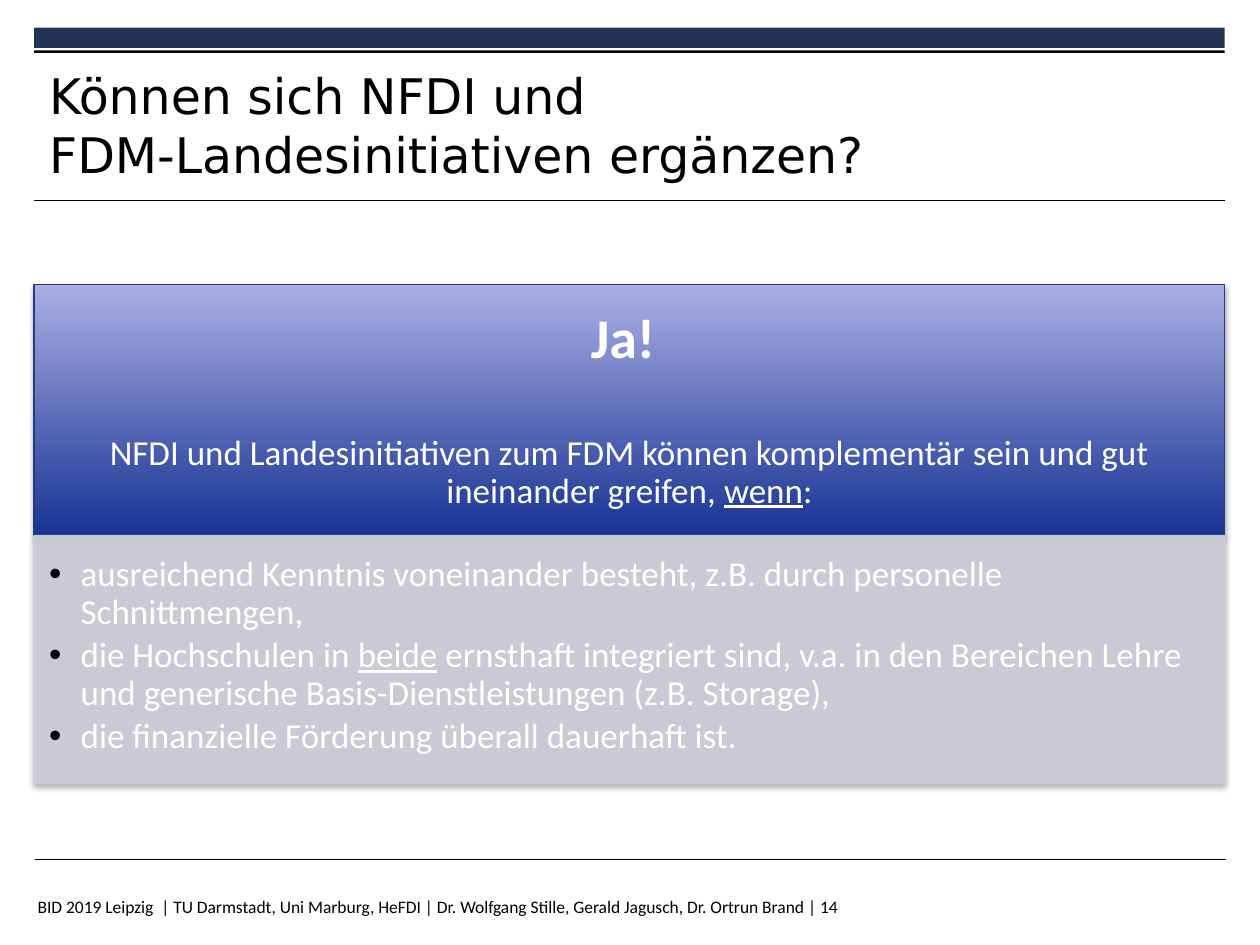
from dataclasses import dataclass

from lxml import etree
from pptx import Presentation
from pptx.dml.color import RGBColor
from pptx.enum.shapes import MSO_CONNECTOR, MSO_SHAPE
from pptx.enum.text import MSO_ANCHOR, MSO_AUTO_SIZE, PP_ALIGN
from pptx.oxml.ns import qn
from pptx.util import Inches, Pt

RECT = MSO_SHAPE.RECTANGLE
LINE = MSO_CONNECTOR.STRAIGHT
MIDDLE, TOP = MSO_ANCHOR.MIDDLE, MSO_ANCHOR.TOP
LEFT, CENTER = PP_ALIGN.LEFT, PP_ALIGN.CENTER
FIXED = MSO_AUTO_SIZE.NONE

EDGE, WIDE = 0.27, 9.45
BLACK, WHITE, GREY = "000000", "FFFFFF", "CDCED9"
BODY = {"name": "Calibri", "size": Pt(20), "color": WHITE}
UNDER = {"underline": True}


@dataclass
class Run:
    text: str
    extra: dict


@dataclass
class Para:
    runs: list[Run]
    after: float = 0
    bullet: bool = False


@dataclass
class Panel:
    top: float
    high: float
    edge: str
    inset: tuple
    align: int
    paras: list[Para]
    stops: tuple = ()
    alpha: int = 100


PANELS = [
    Panel(2.26, 1.99, "263B86", (0.25, 0.14, 0.25, 0.14), CENTER, [
        Para([Run("Ja! ", {"size": Pt(32), "bold": True})], after=37),
        Para([
            Run("NFDI und Landesinitiativen zum FDM können komplementär sein "
                "und gut ineinander greifen, ", {}),
            Run("wenn", UNDER),
            Run(":", {}),
        ]),
    ], stops=("183394", "A9AFE3")),
    Panel(4.25, 1.97, GREY, (0.12, 0.12, 0.16, 0.17), LEFT, [
        Para([Run("ausreichend Kenntnis voneinander besteht, z.B. durch "
                  "personelle Schnittmengen,", {})], 3, True),
        Para([
            Run("die Hochschulen in ", {}),
            Run("beide", UNDER),
            Run(" ernsthaft integriert sind, v.a. in den Bereichen Lehre und "
                "generische Basis-Dienstleistungen (z.B. Storage),", {}),
        ], 3, True),
        Para([Run("die finanzielle Förderung überall dauerhaft ist.", {})], 3, True),
    ], alpha=90),
]


def rgb(code: str) -> RGBColor:
    return RGBColor.from_string(code)


def add_tag(parent, tag: str, **attrs):
    return etree.SubElement(parent, qn(tag), {k: str(v) for k, v in attrs.items()})


def set_font(font, style: dict) -> None:
    for key, value in style.items():
        if key == "color":
            font.color.rgb = rgb(value)
        else:
            setattr(font, key, value)


def set_frame(frame, inset: tuple, anchor) -> None:
    left, top, right, bottom = map(Inches, inset)
    style = {"margin_left": left, "margin_top": top, "margin_right": right,
             "margin_bottom": bottom, "vertical_anchor": anchor,
             "word_wrap": True, "auto_size": FIXED}
    for key, value in style.items():
        setattr(frame, key, value)


def add_rule(slide, left: float, top: float) -> None:
    rule = slide.shapes.add_connector(
        LINE, Inches(left), Inches(top), Inches(left + WIDE), Inches(top))
    rule.line.color.rgb = rgb(BLACK)
    rule.line.width = Pt(0.6)
    add_tag(rule._element.spPr, "a:effectLst")


def add_rect(slide, top: float, high: float):
    rect = slide.shapes.add_shape(
        RECT, Inches(EDGE), Inches(top), Inches(WIDE), Inches(high))
    rect.shadow.inherit = False
    return rect


def add_bar(slide, top: float, high: float, color: str) -> None:
    bar = add_rect(slide, top, high)
    bar.fill.solid()
    bar.fill.fore_color.rgb = rgb(color)
    bar.line.fill.background()


def add_shadow(shape) -> None:
    effects = shape._element.spPr.find(qn("a:effectLst"))
    cast = add_tag(effects, "a:outerShdw", blurRad=Pt(3.1), dist=Pt(1.8),
                   dir=90 * 60000, rotWithShape=0)
    add_tag(add_tag(cast, "a:srgbClr", val=BLACK), "a:alpha", val=35000)


def add_bullet(para) -> None:
    para.level = 1
    props = para._p.get_or_add_pPr()
    props.set("marL", str(Inches(0.25)))
    props.set("indent", str(Inches(-0.25)))
    add_tag(add_tag(props, "a:buClr"), "a:srgbClr", val=BLACK)
    add_tag(props, "a:buFont", typeface="Arial")
    add_tag(props, "a:buChar", char="•")


def fill_paras(frame, panel: Panel) -> None:
    for i, item in enumerate(panel.paras):
        para = frame.paragraphs[0] if i == 0 else frame.add_paragraph()
        if item.bullet:
            add_bullet(para)
        para.alignment = panel.align
        para.line_spacing = 0.9
        para.space_after = Pt(item.after)
        for part in item.runs:
            run = para.add_run()
            run.text = part.text
            set_font(run.font, BODY | part.extra)


def add_panel(slide, panel: Panel) -> None:
    box = add_rect(slide, panel.top, panel.high)
    if panel.stops:
        box.fill.gradient()
        box.fill.gradient_angle = 90
        for stop, color in zip(box.fill.gradient_stops, panel.stops):
            stop.color.rgb = rgb(color)
    else:
        box.fill.solid()
        box.fill.fore_color.rgb = rgb(panel.edge)
    box.line.color.rgb = rgb(panel.edge)
    box.line.width = Pt(0.75)
    if panel.alpha < 100:
        for color in box._element.spPr.iter(qn("a:srgbClr")):
            add_tag(color, "a:alpha", val=panel.alpha * 1000)
    add_shadow(box)
    set_frame(box.text_frame, panel.inset, MIDDLE)
    fill_paras(box.text_frame, panel)


def set_text(shape, text: str, style: dict) -> None:
    para = shape.text_frame.paragraphs[0]
    para.text = text
    para.alignment = LEFT
    for run in para.runs:
        set_font(run.font, style)


def set_title(slide) -> None:
    title = slide.shapes.title
    title.left, title.top = Inches(0.39), Inches(0.53)
    title.width, title.height = Inches(7.52), Inches(0.92)
    set_frame(title.text_frame, (0, 0, 0, 0), MIDDLE)
    set_text(title, "Können sich NFDI und \vFDM-Landesinitiativen ergänzen?",
             {"name": "DejaVu Sans", "size": Pt(28), "color": BLACK})


def add_footer(slide) -> None:
    foot = slide.shapes.add_textbox(
        Inches(0.2), Inches(7.06), Inches(7.08), Inches(0.44))
    set_frame(foot.text_frame, (0.1, 0.05, 0.1, 0.05), TOP)
    set_text(foot, "BID 2019 Leipzig  | TU Darmstadt, Uni Marburg, HeFDI | "
             "Dr. Wolfgang Stille, Gerald Jagusch, Dr. Ortrun Brand | 14",
             {"name": "Calibri", "size": Pt(10), "color": BLACK})


def main() -> None:
    deck = Presentation()
    deck.slide_width, deck.slide_height = Inches(10), Inches(7.5)
    slide = deck.slides.add_slide(deck.slide_layouts[5])
    add_bar(slide, 0.22, 0.16, "233356")
    add_bar(slide, 0.4, 0.02, BLACK)
    add_rule(slide, EDGE, 1.59)
    add_rule(slide, 0.28, 6.82)
    set_title(slide)
    for panel in PANELS:
        add_panel(slide, panel)
    add_footer(slide)
    deck.save("out.pptx")


if __name__ == "__main__":
    main()
